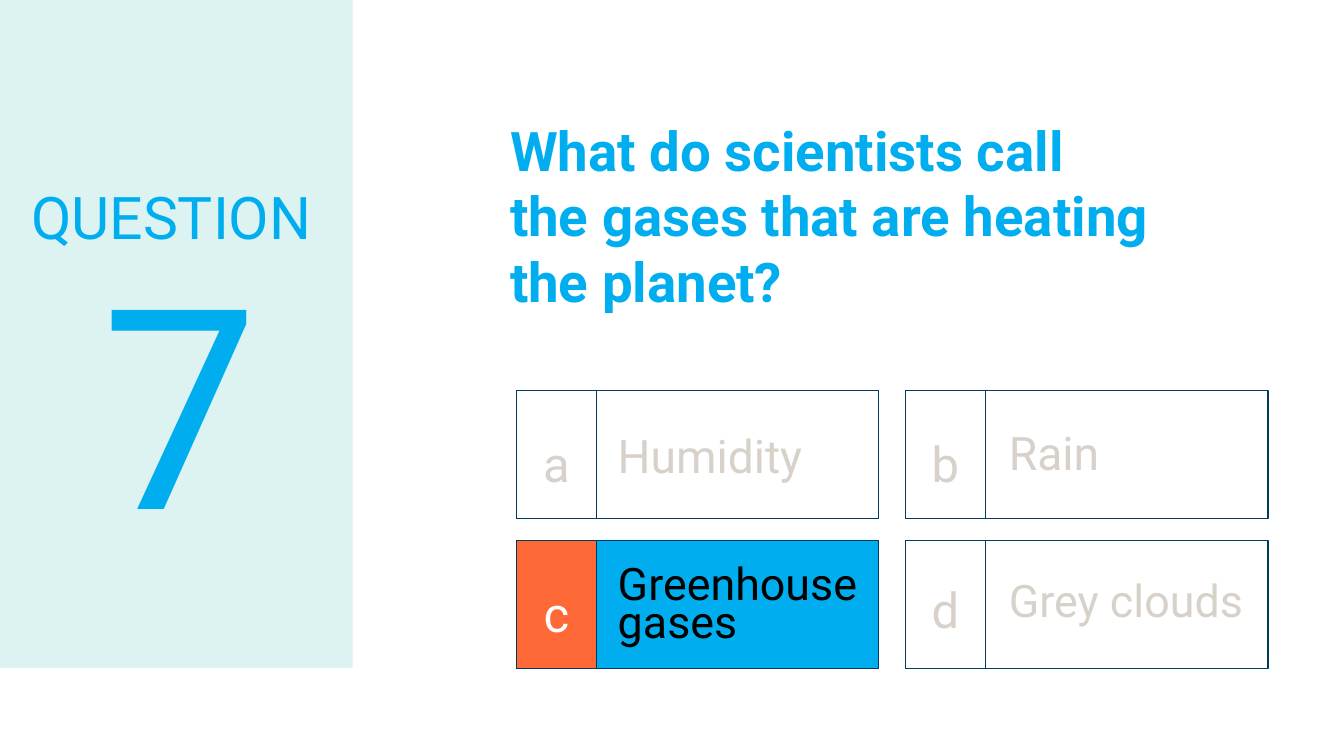
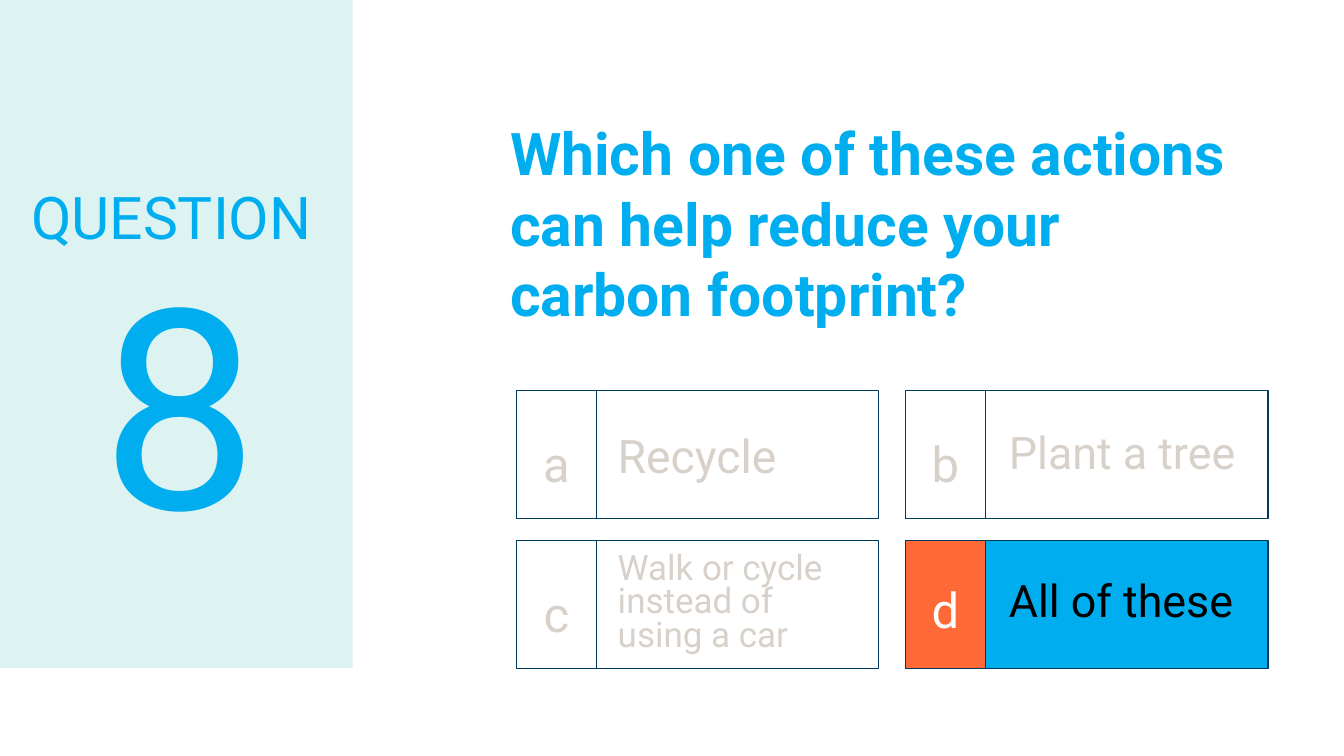
import collections
import pptx
import pptx.dml.color
import pptx.enum.shapes
import pptx.enum.text
import pptx.util

COLORS = {
    "sky": "00AEEF",
    "mint": "DDF3F1",
    "navy": "003B5E",
    "coral": "FF6937",
    "stone": "D8D1CA",
    "black": "000000",
    "white": "FFFFFF",
}
FONT = "Roboto"
CELL = 0.1
COLS, ROWS = 133.33, 75
SIDE = (0, 0, 35, 66.3)
ASK = (49.8, 10.8, 75, 23.7)
GRID = (51.2, 38.7, 74.6, 27.6)
CARD = (36, 12.7)
TAB = 8
ALIGN = pptx.enum.text.PP_ALIGN
ANCHOR = pptx.enum.text.MSO_ANCHOR
FIT = pptx.enum.text.MSO_AUTO_SIZE

Answer = collections.namedtuple(
    "Answer", "text size drop tall wide space",
    defaults=(5.9, 26.1, 0.7))

QUIZ = [
    ("7", "What do scientists call\nthe gases that are heating\nthe planet?", 39, "c", [
        Answer("Humidity", 33, 4.2),
        Answer("Rain", 33, 3.9),
        Answer("Greenhouse gases", 32, 2, tall=9.6, wide=28.2),
        Answer("Grey clouds", 32, 3.7),
    ]),
    ("8", "Which one of these actions can help reduce your carbon footprint?", 42, "d", [
        Answer("Recycle", 33, 4.2),
        Answer("Plant a tree", 32, 3.9),
        Answer("Walk or cycle instead of using a car", 25, 0.3, tall=12.1, wide=25.2, space=0.8),
        Answer("All of these", 32, 3.7),
    ]),
]


def cells(*sizes):
    return [pptx.util.Inches(size * CELL) for size in sizes]


def color(name):
    return pptx.dml.color.RGBColor.from_string(COLORS[name])


def add_rect(slide, box, fill=None, line=None):
    kind = pptx.enum.shapes.MSO_SHAPE.RECTANGLE
    rect = slide.shapes.add_shape(kind, *cells(*box))
    rect.shadow.inherit = False
    if fill:
        rect.fill.solid()
        rect.fill.fore_color.rgb = color(fill)
    else:
        rect.fill.background()
    if line:
        rect.line.color.rgb = color(line)
        rect.line.width = pptx.util.Pt(0.75)
    else:
        rect.line.fill.background()


def add_text(slide, box, text, size, tint="sky", bold=False, align=ALIGN.LEFT,
             anchor=ANCHOR.TOP, space=1.0, inset=1, grow=False):
    frame = slide.shapes.add_textbox(*cells(*box)).text_frame
    frame.word_wrap = True
    frame.auto_size = FIT.SHAPE_TO_FIT_TEXT if grow else FIT.NONE
    frame.vertical_anchor = anchor
    frame.margin_left, frame.margin_top, frame.margin_right, frame.margin_bottom = cells(*[inset] * 4)
    frame.text = text
    for para in frame.paragraphs:
        para.alignment = align
        para.line_spacing = space
        for run in para.runs:
            run.font.name = FONT
            run.font.size = pptx.util.Pt(size)
            run.font.bold = bold
            run.font.color.rgb = color(tint)


def add_card(slide, box, key, answer, right, indent, drop):
    left, top, width, height = box
    add_rect(slide, box, "sky" if right else None, "navy")
    add_rect(slide, (left, top, TAB, height), "coral" if right else None, "navy")
    add_text(slide, (left, top + drop, TAB, 7.9), key, 35,
             tint="white" if right else "stone", align=ALIGN.CENTER, space=1.15, grow=True)
    add_text(slide, (left + indent, top + answer.drop, answer.wide, answer.tall),
             answer.text, answer.size, tint="black" if right else "stone",
             space=answer.space, grow=True)


def add_grid(slide, box, answers, right):
    left, top, width, height = box
    wide, tall = CARD
    for index, (key, answer) in enumerate(zip("abcd", answers)):
        row, col = divmod(index, 2)
        place = (left + col * (width - wide), top + row * (height - tall), wide, tall)
        add_card(slide, place, key, answer, key == right,
                 indent=9.3 if col else 9.1, drop=2 if key == "d" else 2.4)


def add_side(slide, box, number):
    left, top, width, height = box
    add_rect(slide, box, "mint")
    style = dict(anchor=ANCHOR.MIDDLE, space=0.9, inset=0.5)
    add_text(slide, (left + 2.6, top + 16.8, width - 1.6, 10.1), "QUESTION", 42, **style)
    add_text(slide, (left + 2.6, top + 25.9, width - 4.5, 31.2), number, 200,
             align=ALIGN.CENTER, **style)


def add_quiz(deck, number, ask, size, right, answers):
    slide = deck.slides.add_slide(deck.slide_layouts[6])
    add_text(slide, ASK, ask, size, bold=True, inset=0.8)
    add_grid(slide, GRID, answers, right)
    add_side(slide, SIDE, number)


def main():
    deck = pptx.Presentation()
    deck.slide_width, deck.slide_height = cells(COLS, ROWS)
    for quiz in QUIZ:
        add_quiz(deck, *quiz)
    deck.save("out.pptx")


if __name__ == "__main__":
    main()
